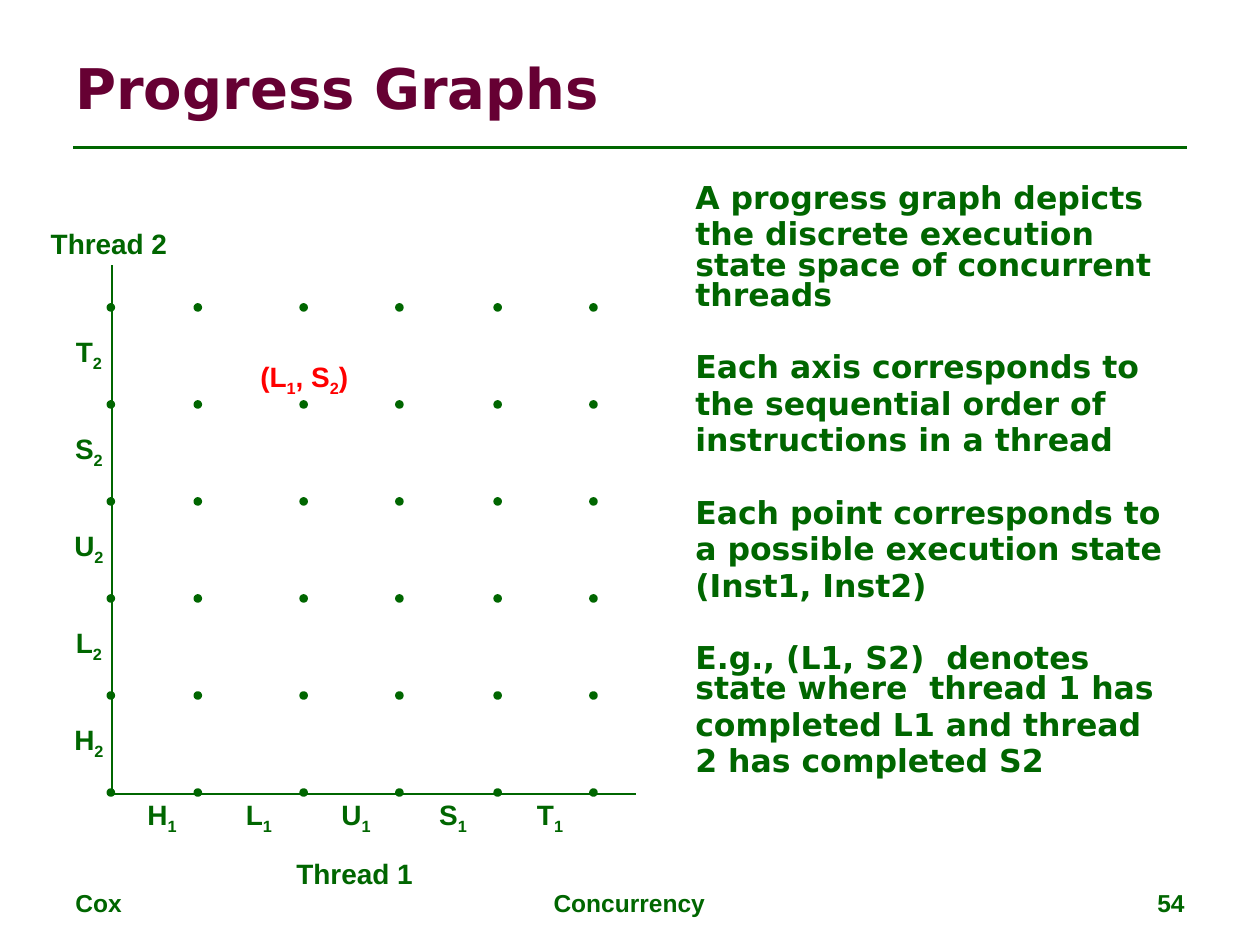
from dataclasses import dataclass

from lxml import etree
from pptx import Presentation
from pptx import util as u
from pptx.dml.color import RGBColor
from pptx.enum import shapes, text
from pptx.oxml import ns

PX = 9144  # EMU; 100 px to the inch


@dataclass(frozen=True)
class Theme:
    green: RGBColor = RGBColor(0x00, 0x66, 0x00)
    plum: RGBColor = RGBColor(0x66, 0x00, 0x33)
    red: RGBColor = RGBColor(0xFF, 0x00, 0x00)
    label_font: str = "Arial"
    text_font: str = "DejaVu Sans"
    title_size: int = 32
    body_size: int = 18
    label_size: int = 16
    footer_size: int = 14


THEME = Theme()
LEFT, CENTER, RIGHT = text.PP_ALIGN.LEFT, text.PP_ALIGN.CENTER, text.PP_ALIGN.RIGHT
MIDDLE = text.MSO_ANCHOR.MIDDLE

BODY_BLOCKS = [
    ["A progress graph depicts",
     "the discrete execution  state space of concurrent threads"],
    ["Each axis corresponds to",
     "the sequential order of",
     "instructions in a thread"],
    ["Each point corresponds to",
     "a possible execution state",
     "(Inst1, Inst2)"],
    ["E.g., (L1, S2)  denotes state where  thread 1 has",
     "completed L1 and thread",
     "2 has completed S2"],
]


def px(*lengths):
    return [u.Emu(length * PX) for length in lengths]


def style(paragraph, font, size, color, align=LEFT):
    paragraph.alignment = align
    paragraph.font.name = font
    paragraph.font.size = u.Pt(size)
    paragraph.font.bold = True
    paragraph.font.color.rgb = color


def add_text_frame(slide, box, anchor=text.MSO_ANCHOR.TOP, wrap=True):
    frame = slide.shapes.add_textbox(*px(*box)).text_frame
    frame.word_wrap = wrap
    frame.vertical_anchor = anchor
    return frame


def add_line(slide, start, end, width):
    line = slide.shapes.add_connector(
        shapes.MSO_CONNECTOR.STRAIGHT, *px(*start, *end))
    line.line.color.rgb = THEME.green
    line.line.width = u.Pt(width)
    etree.SubElement(line._element.spPr, ns.qn("a:effectLst"))


def add_label(slide, center_x, center_y, width, parts, color=THEME.green):
    """Centre a label on a point; every second part is a subscript."""
    height = 37
    box = (center_x - width // 2, center_y - height // 2, width, height)
    frame = add_text_frame(slide, box, MIDDLE, wrap=False)
    frame.auto_size = text.MSO_AUTO_SIZE.SHAPE_TO_FIT_TEXT
    paragraph = frame.paragraphs[0]
    style(paragraph, THEME.label_font, THEME.label_size, color, CENTER)
    for index, part in enumerate(parts):
        run = paragraph.add_run()
        run.text = part
        if index % 2:
            run._r.get_or_add_rPr().set("baseline", "-25000")


def add_dot(slide, center_x, center_y):
    size = 4
    dot = slide.shapes.add_shape(
        shapes.MSO_SHAPE.OVAL,
        *px(center_x - size // 2, center_y - size // 2, size, size))
    dot.shadow.inherit = False
    dot.fill.solid()
    dot.fill.fore_color.rgb = THEME.green
    dot.line.color.rgb = THEME.green
    dot.line.width = u.Pt(2)


def add_header(slide, box):
    left, top, width, height = box
    frame = add_text_frame(slide, box, MIDDLE)
    paragraph = frame.paragraphs[0]
    paragraph.text = "Progress Graphs"
    style(paragraph, THEME.text_font, THEME.title_size, THEME.plum)
    rule_y = top + height + 9
    add_line(slide, (left + 8, rule_y), (left + width - 8, rule_y), 1.5)


def add_body(slide, box):
    frame = add_text_frame(slide, box)
    paragraph = None
    for block in BODY_BLOCKS:
        for index, line in enumerate(block):
            first = paragraph is None
            paragraph = frame.paragraphs[0] if first else frame.add_paragraph()
            paragraph.text = line
            style(paragraph, THEME.text_font, THEME.body_size, THEME.green)
            paragraph.line_spacing = 0.8
            gap = 0 if first else 3.6 if index else 24
            paragraph.space_before = u.Pt(gap)


def add_progress_graph(slide, box):
    """Draw both axes, their instruction labels and the grid of states."""
    left, top, width, height = box
    bottom = top + height
    step = 77
    columns = [left + offset for offset in (-1, 68, 152, 228, 306, 382)]
    rows = [bottom - 1 - step * index for index in range(6)]

    add_line(slide, (left, bottom), (left + width, bottom), 1)
    add_line(slide, (left, bottom), (left, top), 1)
    for index, (first, second) in enumerate(zip("HLUST", "HLUST")):
        add_label(slide, left + 39 + step * index, bottom + 18, 45, (first, "1"))
        add_label(slide, left - 19, bottom - 42 - step * index, 45, (second, "2"))
    for y in rows:
        for x in columns:
            add_dot(slide, x, y)
    add_label(slide, left + 192, bottom + 63, 113, ["Thread 1"])
    add_label(slide, left - 3, top - 17, 113, ["Thread 2"])
    add_label(slide, columns[2], rows[4] - 21, 93,
              ("(L", "1", ", S", "2", ")"), THEME.red)


def add_footer(slide, box):
    left, top, width, height = box
    side, middle = 233, 317
    parts = [
        ("Cox", left, side, LEFT),
        ("Concurrency", left + (width - middle) // 2, middle, CENTER),
        ("54", left + width - side, side, RIGHT),
    ]
    for words, part_left, part_width, align in parts:
        frame = add_text_frame(slide, (part_left, top, part_width, height))
        paragraph = frame.paragraphs[0]
        paragraph.text = words
        style(paragraph, THEME.label_font, THEME.footer_size, THEME.green, align)


def main():
    presentation = Presentation()
    presentation.slide_width, presentation.slide_height = px(1000, 750)
    slide = presentation.slides.add_slide(presentation.slide_layouts[6])
    add_header(slide, (50, 30, 900, 78))
    add_body(slide, (542, 142, 408, 528))
    add_progress_graph(slide, (89, 210, 416, 420))
    add_footer(slide, (50, 700, 900, 35))
    presentation.save("out.pptx")


if __name__ == "__main__":
    main()
